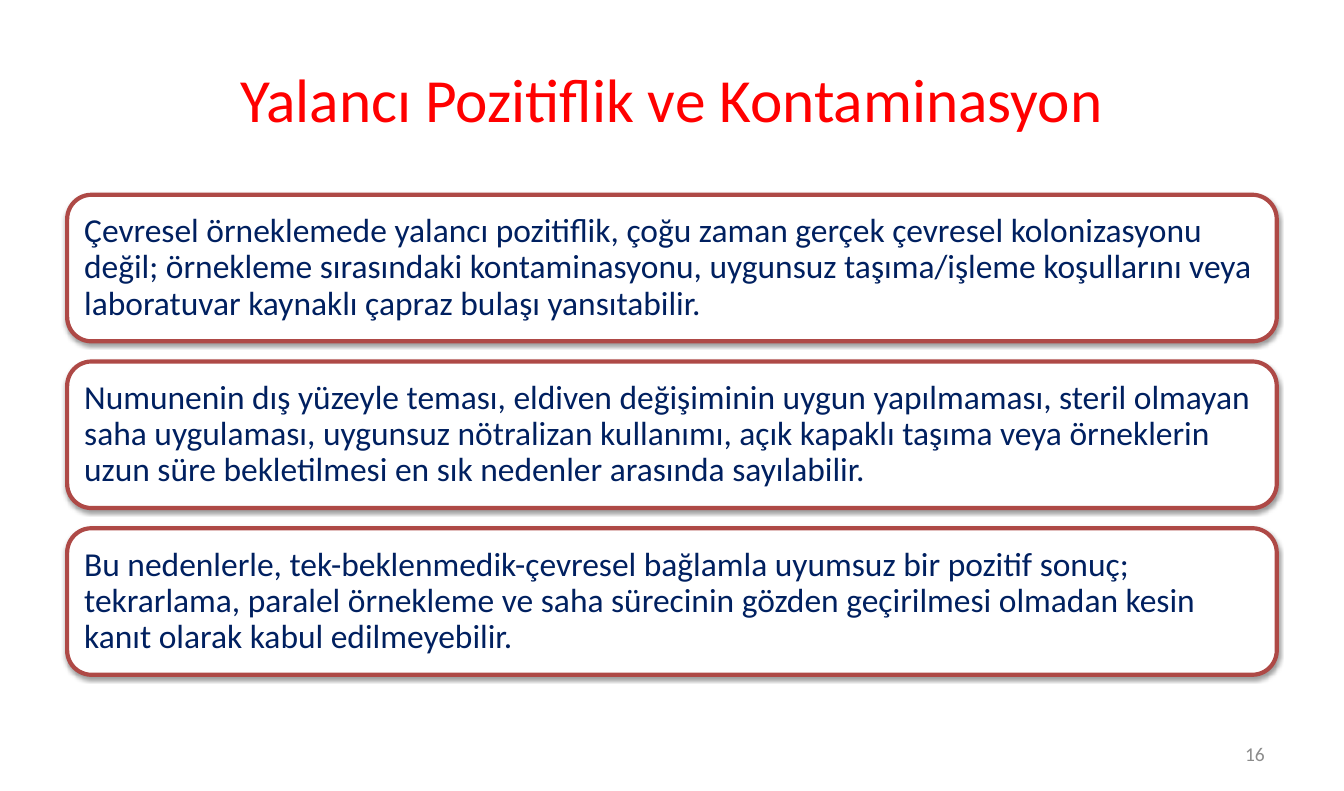
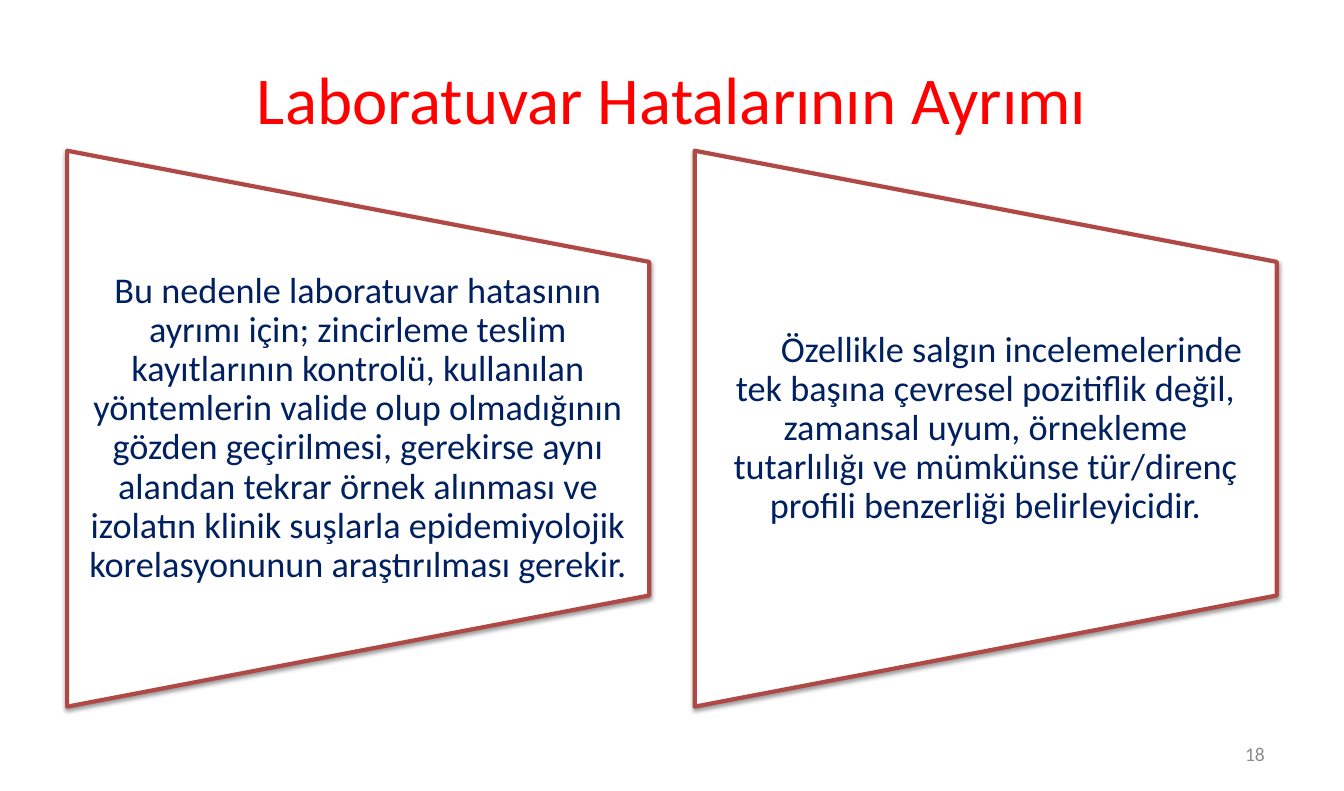
import pptx
import pptx.util
import pptx.dml.color
import pptx.enum.shapes
import pptx.enum.text
import pptx.oxml
import pptx.oxml.ns

Cm, Pt = pptx.util.Cm, pptx.util.Pt
SHAPE = pptx.enum.shapes.MSO_SHAPE
ALIGN = pptx.enum.text.PP_ALIGN
ANCHOR = pptx.enum.text.MSO_ANCHOR

# Shared look
FONT = "Calibri"
RED, NAVY, GREY = "FF0000", "002060", "8C8C8C"
WHITE, BORDER = "FFFFFF", "AE4946"
SLIDE_W, SLIDE_H = 34.01, 20.02
MARGIN = 1.7
CONTENT_W = SLIDE_W - 2 * MARGIN
PAD = (0.3, 0.15)

SHADOW = (
    f'<a:effectLst {pptx.oxml.ns.nsdecls("a")}>'
    '<a:outerShdw blurRad="40000" dist="20000" dir="5400000" rotWithShape="0">'
    '<a:srgbClr val="000000"><a:alpha val="38000"/></a:srgbClr>'
    '</a:outerShdw></a:effectLst>'
)

# Slide content
CAUSES = [
    "Çevresel örneklemede yalancı pozitiflik, çoğu zaman gerçek çevresel "
    "kolonizasyonu değil; örnekleme sırasındaki kontaminasyonu, uygunsuz "
    "taşıma/işleme koşullarını veya laboratuvar kaynaklı çapraz bulaşı "
    "yansıtabilir.",
    "Numunenin dış yüzeyle teması, eldiven değişiminin uygun yapılmaması, "
    "steril olmayan saha uygulaması, uygunsuz nötralizan kullanımı, açık "
    "kapaklı taşıma veya örneklerin uzun süre bekletilmesi en sık nedenler "
    "arasında sayılabilir.",
    "Bu nedenlerle, tek-beklenmedik-çevresel bağlamla uyumsuz bir pozitif "
    "sonuç; tekrarlama, paralel örnekleme ve saha sürecinin gözden "
    "geçirilmesi olmadan kesin kanıt olarak kabul edilmeyebilir.",
]
# Text, side inset and first-line indent of each panel
PANELS = [
    ("Bu nedenle laboratuvar hatasının ayrımı için; zincirleme teslim "
     "kayıtlarının kontrolü, kullanılan yöntemlerin valide olup olmadığının "
     "gözden geçirilmesi, gerekirse aynı alandan tekrar örnek alınması ve "
     "izolatın klinik suşlarla epidemiyolojik korelasyonunun araştırılması "
     "gerekir.", 0.46, 0),
    ("Özellikle salgın incelemelerinde tek başına çevresel pozitiflik değil, "
     "zamansal uyum, örnekleme tutarlılığı ve mümkünse tür/direnç profili "
     "benzerliği belirleyicidir.", 0.56, 1.32),
]


def rgb(color):
    return pptx.dml.color.RGBColor.from_string(color)


def set_all(target, values):
    for name, value in values.items():
        setattr(target, name, value)


def write(sp, text, size, color, align, pad=PAD, spacing=1.0, indent=0):
    """Fill a shape, text box or placeholder with one paragraph."""
    side, edge = Cm(pad[0]), Cm(pad[1])
    tf = sp.text_frame
    set_all(tf, {
        "word_wrap": True, "auto_size": pptx.enum.text.MSO_AUTO_SIZE.NONE,
        "vertical_anchor": ANCHOR.MIDDLE,
        "margin_left": side, "margin_right": side,
        "margin_top": edge, "margin_bottom": edge,
    })
    p = tf.paragraphs[0]
    set_all(p, {"alignment": align, "line_spacing": spacing})
    if indent:
        p._p.get_or_add_pPr().set("indent", str(Cm(indent)))
    r = p.add_run()
    r.text = text
    set_all(r.font, {"name": FONT, "size": Pt(size)})
    r.font.color.rgb = rgb(color)


def add_text(s, left, top, width, height, text, size, color, align, **layout):
    sp = s.shapes.add_textbox(Cm(left), Cm(top), Cm(width), Cm(height))
    write(sp, text, size, color, align, **layout)


def add_frame(s, kind, left, top, width, height):
    """White shape with a red border and a soft shadow."""
    sp = s.shapes.add_shape(kind, Cm(left), Cm(top), Cm(width), Cm(height))
    sp.fill.solid()
    sp.fill.fore_color.rgb = rgb(WHITE)
    sp.line.color.rgb = rgb(BORDER)
    sp.line.width = Pt(3)
    sp.shadow.inherit = False
    old = sp._element.spPr.find(pptx.oxml.ns.qn("a:effectLst"))
    old.getparent().replace(old, pptx.oxml.parse_xml(SHADOW))
    return sp


def add_slide(prs, title, size, number):
    s = prs.slides.add_slide(prs.slide_layouts[5])
    set_all(s.shapes.title, {"left": Cm(MARGIN), "top": Cm(0.81),
                             "width": Cm(CONTENT_W), "height": Cm(3.33)})
    write(s.shapes.title, title, size, RED, ALIGN.CENTER)
    width = 7.92
    add_text(s, SLIDE_W - MARGIN - width, 18.54, width, 1.07,
             str(number), 14, GREY, ALIGN.RIGHT)
    return s


def add_boxes(s, texts):
    """Stack of rounded boxes across the content width."""
    top, height, gap = 4.93, 3.71, 0.51
    for i, text in enumerate(texts):
        sp = add_frame(s, SHAPE.ROUNDED_RECTANGLE, MARGIN,
                       top + i * (height + gap), CONTENT_W, height)
        write(sp, text, 24, NAVY, ALIGN.LEFT, pad=(0.25, 0.25), spacing=0.9)


def add_panels(s, panels):
    """Side-by-side panels that narrow to the right, text upright on top."""
    width, height, middle = 14.73, 14.07, 10.85
    step = (CONTENT_W - width) / (len(panels) - 1)
    text_h = height * 0.6
    for i, (text, side, indent) in enumerate(panels):
        left = MARGIN + i * step
        # Turned a quarter, so width and height swap around the same centre
        sp = add_frame(s, SHAPE.FLOWCHART_MANUAL_OPERATION,
                       left + (width - height) / 2, middle - width / 2,
                       height, width)
        sp.rotation = 270
        add_text(s, left, middle - text_h / 2, width, text_h, text, 26, NAVY,
                 ALIGN.CENTER, pad=(side, 0), spacing=0.9, indent=indent)


def main():
    prs = pptx.Presentation()
    prs.slide_width, prs.slide_height = Cm(SLIDE_W), Cm(SLIDE_H)
    add_boxes(add_slide(prs, "Yalancı Pozitiflik ve Kontaminasyon", 44, 16),
              CAUSES)
    add_panels(add_slide(prs, "Laboratuvar Hatalarının Ayrımı", 48, 18),
               PANELS)
    prs.save("out.pptx")


if __name__ == "__main__":
    main()
